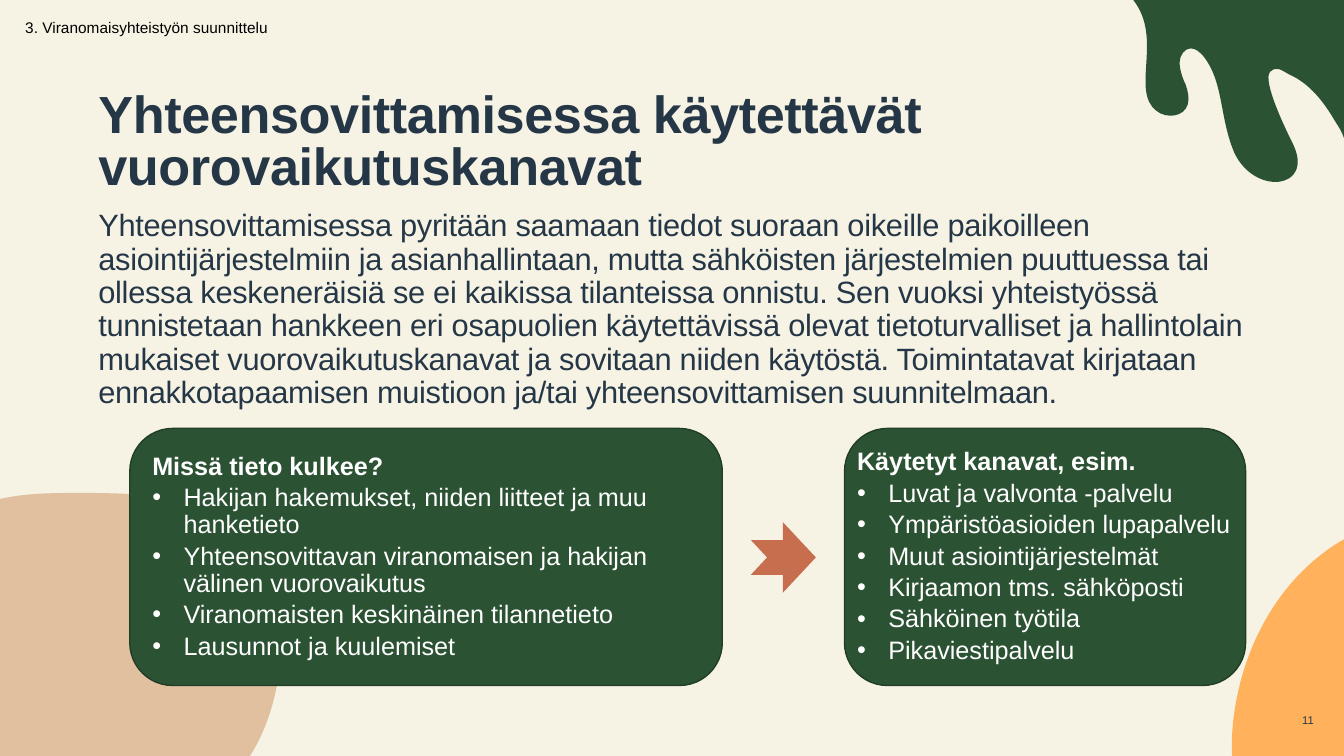
import lxml.etree
import pptx
import pptx.dml.color
import pptx.enum.shapes
import pptx.enum.text
import pptx.oxml.ns
import pptx.util

COLOURS = {"cream": "F6F3E5", "green": "2C5234", "edge": "213D26", "tan": "E0C09F",
           "orange": "FFB25B", "rust": "C66E4E", "navy": "253746",
           "black": "000000", "white": "FFFFFF"}
FONT = "Arial"
ANCHOR = pptx.enum.text.MSO_ANCHOR
ALIGN = pptx.enum.text.PP_ALIGN
SHAPE = pptx.enum.shapes.MSO_SHAPE

# Each blob: colour, box, start, Bezier curves and closing corner, in 1/100 inch
BLOBS = [
    ("orange", (1221, 535, 112, 215), (112, 0),
     [(94, 10, 76, 25, 61, 42), (32, 75, 14, 116, 6, 156), (2, 175, 0, 196, 1, 215)],
     (112, 215)),
    ("tan", (0, 489, 281, 261), (248, 261),
     [(265, 234, 274, 203, 278, 170), (280, 153, 281, 137, 280, 121),
      (279, 90, 275, 57, 251, 33), (232, 14, 204, 8, 178, 5),
      (145, 1, 112, 0, 79, 0), (54, 0, 26, 0, 0, 6)],
     (0, 261)),
    ("green", (1121, 0, 212, 195), (212, 137),
     [(210, 131, 207, 126, 203, 120), (192, 101, 178, 83, 158, 74),
      (150, 70, 146, 65, 139, 71), (130, 79, 155, 130, 161, 142),
      (184, 188, 123, 195, 103, 151), (88, 115, 93, 81, 72, 55),
      (69, 52, 65, 48, 60, 48), (54, 48, 49, 55, 49, 62),
      (49, 69, 52, 78, 55, 84), (57, 90, 59, 97, 57, 104),
      (53, 116, 36, 118, 26, 110), (0, 90, 33, 38, 3, 0)],
     (212, 0)),
]

TITLE = "Yhteensovittamisessa käytettävät vuorovaikutuskanavat"
BODY = (
    "Yhteensovittamisessa pyritään saamaan tiedot suoraan oikeille paikoilleen "
    "asiointijärjestelmiin ja asianhallintaan, mutta sähköisten järjestelmien puuttuessa tai "
    "ollessa keskeneräisiä se ei kaikissa tilanteissa onnistu. Sen vuoksi yhteistyössä "
    "tunnistetaan hankkeen eri osapuolien käytettävissä olevat tietoturvalliset ja hallintolain "
    "mukaiset vuorovaikutuskanavat ja sovitaan niiden käytöstä. Toimintatavat kirjataan "
    "ennakkotapaamisen muistioon ja/tai yhteensovittamisen suunnitelmaan.")
INFORMATION = [
    "Missä tieto kulkee?",
    "Hakijan hakemukset, niiden liitteet ja muu hanketieto",
    "Yhteensovittavan viranomaisen ja hakijan välinen vuorovaikutus",
    "Viranomaisten keskinäinen tilannetieto",
    "Lausunnot ja kuulemiset"]
CHANNELS = [
    "Käytetyt kanavat, esim.",
    "Luvat ja valvonta -palvelu",
    "Ympäristöasioiden lupapalvelu",
    "Muut asiointijärjestelmät",
    "Kirjaamon tms. sähköposti",
    "Sähköinen työtila",
    "Pikaviestipalvelu"]


def colour(name):
    return pptx.dml.color.RGBColor.from_string(COLOURS[name])


def add_element(parent, tag, **attributes):
    return lxml.etree.SubElement(parent, pptx.oxml.ns.qn(tag), attributes)


def part(box, left, top, width, height):
    """Return the area that lies at the given percentages of a box."""
    x, y, w, h = box
    return (int(x + w * left / 100), int(y + h * top / 100),
            int(w * width / 100), int(h * height / 100))


def paint(shape, fill, line=None):
    shape.shadow.inherit = False
    shape.fill.solid()
    shape.fill.fore_color.rgb = colour(fill)
    if line:
        shape.line.color.rgb = colour(line)
        shape.line.width = pptx.util.Pt(1)
        add_element(shape.line._get_or_add_ln(), "a:miter", lim="800000")
    else:
        shape.line.fill.background()


def set_bullet(para, mark=None):
    properties = para._p.get_or_add_pPr()
    indent = pptx.util.Inches(0.31) if mark else 0
    properties.set("marL", str(indent))
    properties.set("indent", str(-indent))
    if mark:
        add_element(properties, "a:buFont", typeface=FONT)
        add_element(properties, "a:buChar", char=mark)
    else:
        add_element(properties, "a:buNone")


def format_para(para, size, ink, bold=False, spacing=None, align=ALIGN.LEFT):
    para.alignment = align
    para.font.name = FONT
    para.font.size = pptx.util.Pt(size)
    para.font.bold = bold
    para.font.color.rgb = colour(ink)
    if spacing is not None:
        para.line_spacing = spacing


def set_frame(frame, anchor=ANCHOR.TOP, side=0, end=0):
    frame.word_wrap = True
    frame.auto_size = pptx.enum.text.MSO_AUTO_SIZE.NONE
    frame.vertical_anchor = anchor
    frame.margin_left = frame.margin_right = pptx.util.Inches(side)
    frame.margin_top = frame.margin_bottom = pptx.util.Inches(end)


def add_blob(page, fill, box, start, curves, corner):
    unit = pptx.util.Inches(0.01)
    builder = page.shapes.build_freeform(*start, scale=unit)
    builder.add_line_segments([curve[4:] for curve in curves] + [corner])
    blob = builder.convert_to_shape()
    blob.left, blob.top, blob.width, blob.height = (unit * length for length in box)
    paint(blob, fill)
    # Turn the straight outline into curves
    outline = blob._element.find(".//" + pptx.oxml.ns.qn("a:path"))
    outline.set("w", str(box[2]))
    outline.set("h", str(box[3]))
    for segment in list(outline):
        outline.remove(segment)
    steps = [("a:moveTo", start)]
    steps += [("a:cubicBezTo", curve) for curve in curves]
    steps += [("a:lnTo", corner), ("a:close", ())]
    for tag, values in steps:
        segment = add_element(outline, tag)
        for x, y in zip(values[::2], values[1::2]):
            add_element(segment, "a:pt", x=str(x), y=str(y))
    return blob


def add_decoration(page):
    for index, blob in enumerate(BLOBS):
        element = add_blob(page, *blob)._element
        # Keep the decoration behind the placeholders
        element.getparent().insert(2 + index, element)


def add_label(page, box, text, size, ink, anchor=ANCHOR.TOP, **layout):
    frame = page.shapes.add_textbox(*box).text_frame
    set_frame(frame, anchor)
    para = frame.paragraphs[0]
    para.text = text
    format_para(para, size, ink, **layout)


def fill_placeholder(holder, box, text, size, tracking, spacing, bold=False):
    holder.left, holder.top, holder.width, holder.height = box
    set_frame(holder.text_frame)
    para = holder.text_frame.paragraphs[0]
    para.text = text
    set_bullet(para)
    para.space_before = pptx.util.Pt(0)
    format_para(para, size, "navy", bold, spacing)
    para.runs[0].font._element.set("spc", str(tracking))


def add_panel(page, box, lines, side):
    panel = page.shapes.add_shape(SHAPE.ROUNDED_RECTANGLE, *box)
    paint(panel, "green", "edge")
    frame = panel.text_frame
    set_frame(frame, ANCHOR.MIDDLE, side, 0.05)
    for index, line in enumerate(lines):
        para = frame.add_paragraph() if index else frame.paragraphs[0]
        para.text = line
        if index:
            set_bullet(para, "•")
        para.space_after = pptx.util.Pt(3)
        format_para(para, 18, "white", bold=index == 0, spacing=0.9)


def add_flow(page, box):
    add_panel(page, part(box, 0, 0, 53.1, 100), INFORMATION, 0.1)
    arrow = page.shapes.add_shape(SHAPE.NOTCHED_RIGHT_ARROW, *part(box, 55.8, 37.2, 5.6, 26))
    paint(arrow, "rust", "rust")
    add_panel(page, part(box, 64.05, 0, 35.95, 100), CHANNELS, 0)


def add_channels_page(deck):
    page = deck.slides.add_slide(deck.slide_layouts[1])
    page.background.fill.solid()
    page.background.fill.fore_color.rgb = colour("cream")
    whole = (0, 0, deck.slide_width, deck.slide_height)
    add_decoration(page)
    # Page number and section name
    add_label(page, part(whole, 95.55, 93.73, 3.53, 2.93), "11", 8, "navy",
              align=ALIGN.CENTER, anchor=ANCHOR.MIDDLE)
    add_label(page, part(whole, 1.88, 3.07, 18.6, 3.47),
              "3. Viranomaisyhteistyön suunnittelu", 11, "black", spacing=pptx.util.Pt(9.8))
    # Title and introduction
    fill_placeholder(page.shapes.title, part(whole, 7.32, 12.13, 85.35, 17.47),
                     TITLE, 37.3, -30, pptx.util.Pt(37.3), bold=True)
    fill_placeholder(page.placeholders[1], part(whole, 7.32, 27.83, 86.4, 21.07),
                     BODY, 22, -20, 0.9)
    # Information and the channels it uses
    add_flow(page, part(whole, 9.66, 56.67, 83.02, 34))


def main():
    deck = pptx.Presentation()
    deck.slide_width = pptx.util.Inches(13.33)
    deck.slide_height = pptx.util.Inches(7.5)
    add_channels_page(deck)
    deck.save("out.pptx")


if __name__ == "__main__":
    main()
